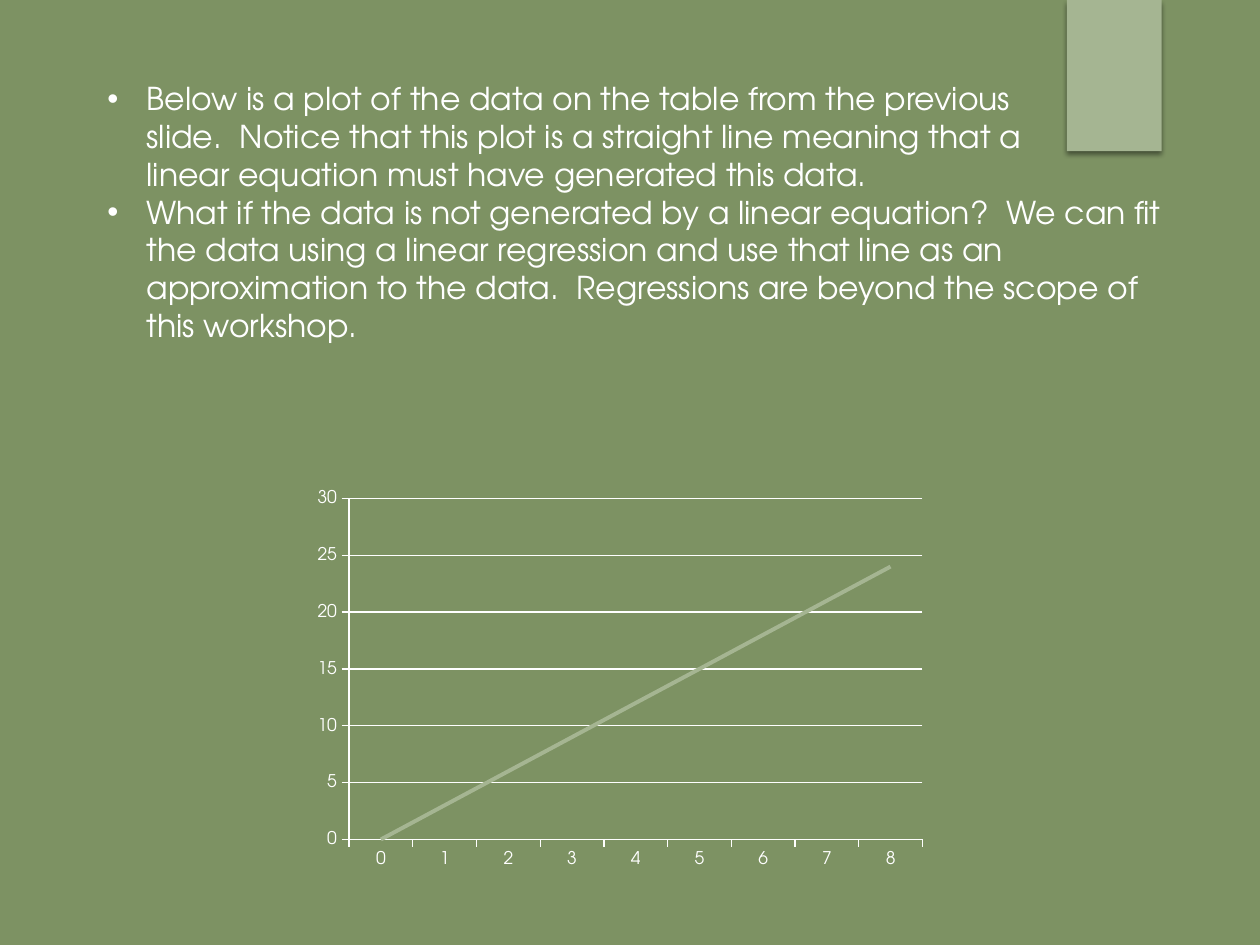
from lxml import etree
from pptx import Presentation
from pptx.chart.data import CategoryChartData
from pptx.dml.color import RGBColor
from pptx.enum.chart import XL_CHART_TYPE, XL_TICK_MARK
from pptx.enum.shapes import MSO_SHAPE
from pptx.enum.text import MSO_ANCHOR, MSO_AUTO_SIZE, PP_ALIGN
from pptx.oxml.ns import qn
from pptx.util import Cm, Pt

LINE, RECT = XL_CHART_TYPE.LINE, MSO_SHAPE.RECTANGLE
TICK_OUT, TICK_NONE = XL_TICK_MARK.OUTSIDE, XL_TICK_MARK.NONE
TOP, LEFT = MSO_ANCHOR.TOP, PP_ALIGN.LEFT
GROW = MSO_AUTO_SIZE.SHAPE_TO_FIT_TEXT

# Content ("\v" is a line break)
BULLETS = [
    "Below is a plot of the data on the table from the previous \v"
    "slide.  Notice that this plot is a straight line meaning that a \v"
    "linear equation must have generated this data.",
    "What if the data is not generated by a linear equation?  We can fit "
    "the data using a linear regression and use that line as an "
    "approximation to the data.  Regressions are beyond the scope of "
    "this workshop.",
]
X_VALUES = range(9)
SLOPE = 3

# Theme and layout
THEME = {
    "background": RGBColor.from_string("7D9263"),
    "accent": RGBColor.from_string("A5B592"),
    "text": RGBColor.from_string("FFFFFF"),
    "font": "TeX Gyre Adventor",
    "body_size": Pt(18),
    "chart_size": Pt(10),
    "axis_width": Pt(0.75),
    "series_width": Pt(2.25),
}
TAB_BOX = (Cm(21.51), Cm(0), Cm(1.91), Cm(3.05))
CHART_BOX = (Cm(6.15), Cm(9.73), Cm(12.7), Cm(7.92))
BODY_BOX = (Cm(1.91), Cm(1.47), Cm(21.79), Cm(5.64))
INDENT = Cm(0.79)


def apply(obj, values):
    for name, value in values.items():
        setattr(obj, name, value)


def format_font(font, size):
    apply(font, {"name": THEME["font"], "size": size})
    font.color.rgb = THEME["text"]


def format_line(line, color, width):
    line.color.rgb = color
    line.width = width


def add_shadow(sp):
    sp.shadow.inherit = False
    effects = sp._element.spPr.find(qn("a:effectLst"))
    shadow = etree.SubElement(effects, qn("a:outerShdw"), blurRad=str(Pt(3)),
                              dist=str(Pt(2)), dir="5400000", rotWithShape="0")
    color = etree.SubElement(shadow, qn("a:srgbClr"), val="000000")
    etree.SubElement(color, qn("a:alpha"), val="45000")


def add_tab(s):
    sp = s.shapes.add_shape(RECT, *TAB_BOX)
    sp.fill.solid()
    sp.fill.fore_color.rgb = THEME["accent"]
    sp.line.fill.background()
    add_shadow(sp)


def add_line_chart(s):
    data = CategoryChartData()
    data.categories = [str(x) for x in X_VALUES]
    data.add_series("Series 1", [SLOPE * x for x in X_VALUES])
    chart = s.shapes.add_chart(LINE, *CHART_BOX, data).chart
    apply(chart, {"has_legend": False, "has_title": False})
    format_font(chart.font, THEME["chart_size"])

    plot = chart.plots[0]
    plot.vary_by_categories = False
    series = plot.series[0]
    series.smooth = False
    format_line(series.format.line, THEME["accent"], THEME["series_width"])

    for axis in (chart.category_axis, chart.value_axis):
        apply(axis, {"major_tick_mark": TICK_OUT, "minor_tick_mark": TICK_NONE})
        format_line(axis.format.line, THEME["text"], THEME["axis_width"])
    apply(chart.value_axis, {"minimum_scale": 0, "maximum_scale": 30,
                             "major_unit": 5, "has_major_gridlines": True})
    format_line(chart.value_axis.major_gridlines.format.line,
                THEME["text"], THEME["axis_width"])


def fill_body(sp):
    apply(sp, dict(zip(("left", "top", "width", "height"), BODY_BOX)))
    tf = sp.text_frame
    apply(tf, {"word_wrap": True, "auto_size": GROW, "vertical_anchor": TOP})
    for i, text in enumerate(BULLETS):
        p = tf.add_paragraph() if i else tf.paragraphs[0]
        p.text = text
        apply(p, {"alignment": LEFT, "space_before": Pt(0), "space_after": Pt(0)})
        pPr = p._p.get_or_add_pPr()
        pPr.set("marL", str(INDENT))
        pPr.set("indent", str(-INDENT))
        etree.SubElement(pPr, qn("a:buFont"), typeface="Arial")
        etree.SubElement(pPr, qn("a:buChar"), char="•")
        for r in p.runs:
            format_font(r.font, THEME["body_size"])


def main():
    prs = Presentation()
    apply(prs, {"slide_width": Cm(25.4), "slide_height": Cm(19.05)})
    s = prs.slides.add_slide(prs.slide_layouts[1])
    s.background.fill.solid()
    s.background.fill.fore_color.rgb = THEME["background"]

    # The slide has no title
    title = s.shapes.title._element
    title.getparent().remove(title)

    fill_body(s.placeholders[1])
    add_tab(s)
    add_line_chart(s)
    prs.save("out.pptx")


if __name__ == "__main__":
    main()
